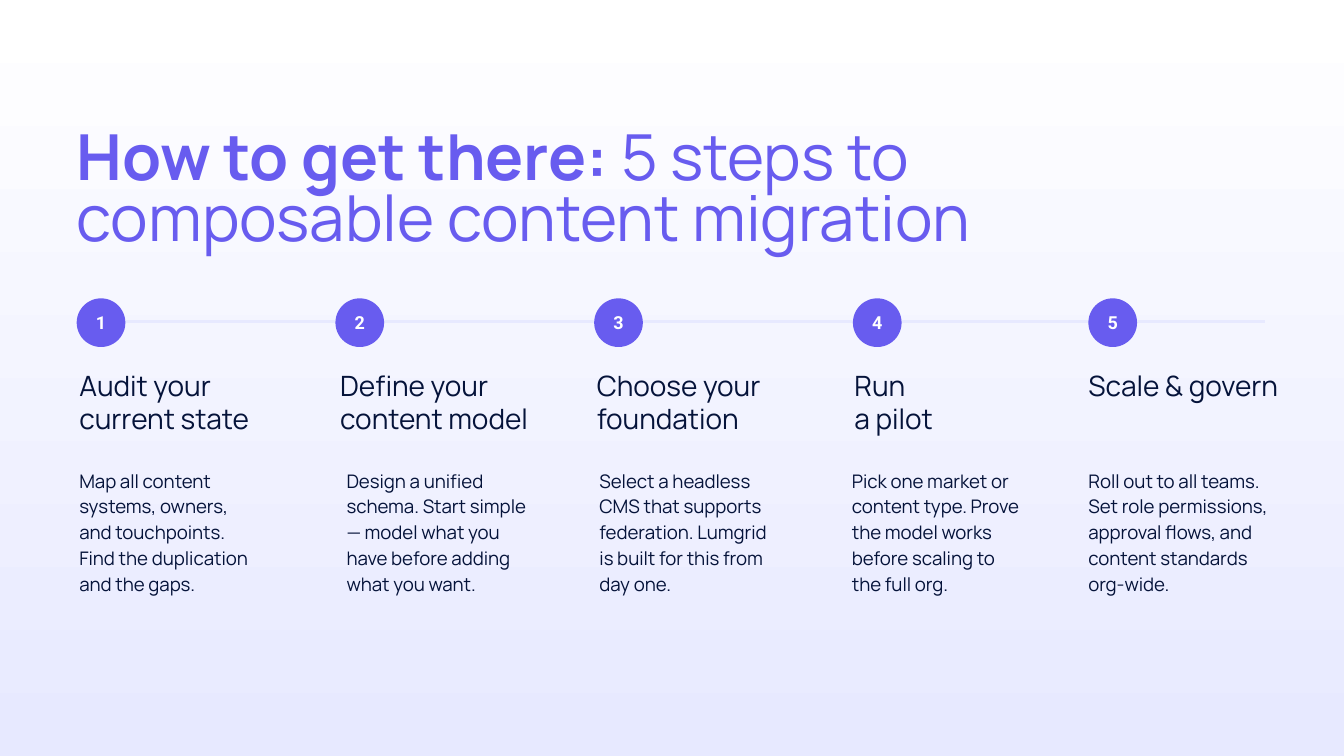
from lxml import etree
from pptx import Presentation
from pptx.dml.color import RGBColor
from pptx.enum.shapes import MSO_CONNECTOR, MSO_SHAPE
from pptx.enum.text import MSO_ANCHOR, MSO_AUTO_SIZE, PP_ALIGN
from pptx.oxml.ns import qn
from pptx.util import Cm, Pt

STRAIGHT = MSO_CONNECTOR.STRAIGHT
OVAL = MSO_SHAPE.OVAL
TOP, MIDDLE = MSO_ANCHOR.TOP, MSO_ANCHOR.MIDDLE
LEFT, CENTER = PP_ALIGN.LEFT, PP_ALIGN.CENTER
NO_AUTOFIT = MSO_AUTO_SIZE.NONE

COLORS = {"accent": "685CEF", "ink": "05133A", "pale": "E7E9FF", "white": "FFFFFF"}
FONT, NUMBER_FONT = "Manrope", "Roboto"
TITLE_ONLY = 5

# Marker grid in cm; the last step sits closer to the one before it
FIRST_X, STEP_X, LAST_X = 1.45, 4.89, 20.57
MARKER_Y, MARKER_SIZE = 5.64, 0.92
LINE_Y = 6.07

# Heading, its left and width, then text, its left and width
STEPS = [
    ("Audit your current state", 1.5, 3.68,
     "Map all content systems, owners, and touchpoints. "
     "Find the duplication and the gaps.", 1.5, 3.25),
    ("Define your content model", 6.43, 4.11,
     "Design a unified schema. Start simple — model what you "
     "have before adding what you want.", 6.55, 3.68),
    ("Choose your foundation", 11.28, 3.68,
     "Select a headless CMS that supports federation. "
     "Lumgrid is built for this from day one.", 11.33, 3.45),
    ("Run\va pilot", 16.15, 3.68,
     "Pick one market or content type. Prove the model works "
     "before scaling to the full org.", 16.1, 3.25),
    ("Scale & govern", 20.57, 3.68,
     "Roll out to all teams. Set role permissions, approval flows, "
     "and content standards org-wide.", 20.57, 3.68),
]


def rgb(name):
    return RGBColor.from_string(COLORS[name])


class Deck:
    """Holds the style and the current slide."""

    def __init__(self, prs):
        self.s = prs.slides.add_slide(prs.slide_layouts[TITLE_ONLY])

    def background(self, bottom, top):
        fill = self.s.background.fill
        fill.gradient()
        fill.gradient_angle = 90
        for stop, color in zip(fill.gradient_stops, (bottom, top)):
            stop.color.rgb = rgb(color)

    def frame(self, sp, anchor=TOP):
        tf = sp.text_frame
        tf.word_wrap = True
        tf.auto_size = NO_AUTOFIT
        tf.vertical_anchor = anchor
        tf.margin_left = tf.margin_right = tf.margin_top = tf.margin_bottom = 0
        return tf

    def style(self, p, size, color, align=LEFT, spacing=1.0, font=FONT, bold=False):
        p.alignment = align
        p.line_spacing = spacing
        for r in p.runs:
            r.font.name = font
            r.font.size = Pt(size)
            r.font.bold = bold
            r.font.color.rgb = rgb(color)

    def title(self, lead, lines, x, y, w, h):
        sp = self.s.shapes.title
        sp.left, sp.top, sp.width, sp.height = Cm(x), Cm(y), Cm(w), Cm(h)
        p = self.frame(sp, MIDDLE).paragraphs[0]
        p.add_run().text = lead
        for i, line in enumerate(lines):
            if i:
                p.add_line_break()
            p.add_run().text = line
        self.style(p, 34, "accent", spacing=0.8)
        p.runs[0].font.bold = True

    def text(self, text, x, y, w, h, size, spacing=1.0):
        sp = self.s.shapes.add_textbox(Cm(x), Cm(y), Cm(w), Cm(h))
        p = self.frame(sp).paragraphs[0]
        p.text = text
        self.style(p, size, "ink", spacing=spacing)

    def line(self, x1, x2, y):
        sp = self.s.shapes.add_connector(STRAIGHT, Cm(x1), Cm(y), Cm(x2), Cm(y))
        sp.line.color.rgb = rgb("pale")
        sp.line.width = Pt(1.5)
        etree.SubElement(sp._element.spPr, qn("a:effectLst"))

    def marker(self, number, x):
        size = Cm(MARKER_SIZE)
        sp = self.s.shapes.add_shape(OVAL, Cm(x), Cm(MARKER_Y), size, size)
        sp.shadow.inherit = False
        sp.fill.solid()
        sp.fill.fore_color.rgb = rgb("accent")
        sp.line.fill.background()
        p = self.frame(sp, MIDDLE).paragraphs[0]
        p.text = str(number)
        self.style(p, 9.6, "white", CENTER, font=NUMBER_FONT, bold=True)


def main():
    prs = Presentation()
    prs.slide_width, prs.slide_height = Cm(25.4), Cm(14.29)
    deck = Deck(prs)
    deck.background("pale", "white")

    # Title
    deck.title("How to get there: ", ["5 steps to", "composable content migration"],
               1.45, 2.59, 22.35, 2.11)

    # Timeline with numbered steps
    deck.line(1.57, 23.9, LINE_Y)
    for i, (heading, head_x, head_w, text, text_x, text_w) in enumerate(STEPS):
        last = i == len(STEPS) - 1
        deck.marker(i + 1, LAST_X if last else FIRST_X + i * STEP_X)
        deck.text(heading, head_x, 6.96, head_w, 1.65, 15)
        deck.text(text, text_x, 8.81, text_w, 2.87, 10, 1.15)

    prs.save("out.pptx")


if __name__ == "__main__":
    main()
